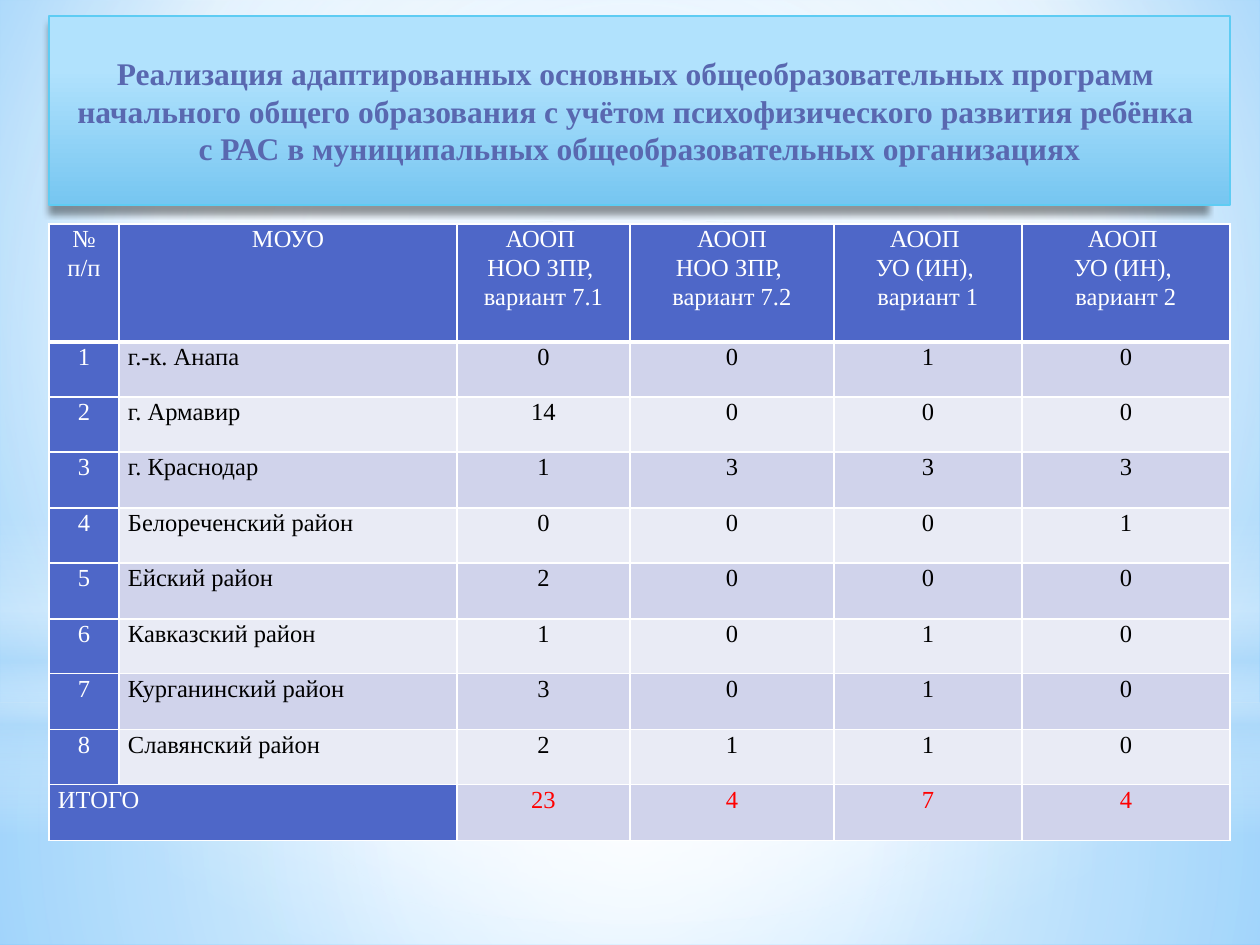
from lxml.etree import SubElement
from pptx import Presentation
from pptx.dml.color import RGBColor
from pptx.enum.shapes import MSO_SHAPE
from pptx.enum.text import MSO_ANCHOR, PP_ALIGN
from pptx.oxml.ns import qn
from pptx.util import Pt

EMU_PER_PX = 914400 / 126
FONT = "Times New Roman"

WHITE = RGBColor(0xFF, 0xFF, 0xFF)
BLACK = RGBColor(0x00, 0x00, 0x00)
RED = RGBColor(0xFF, 0x00, 0x00)
INDIGO = RGBColor(0x59, 0x68, 0xB0)
BLUE = RGBColor(0x4E, 0x67, 0xC8)
BAND_DARK = RGBColor(0xD0, 0xD3, 0xEB)
BAND_LIGHT = RGBColor(0xE9, 0xEB, 0xF5)
SKY = RGBColor(0xB4, 0xDC, 0xFA)
BACK_EDGE = RGBColor(0x5B, 0xB9, 0xFF)
BACK_CENTRE = RGBColor(0x9E, 0xD5, 0xFF)
TITLE_TOP = RGBColor(0xB1, 0xE2, 0xFD)
TITLE_BOTTOM = RGBColor(0x76, 0xC6, 0xF1)
TITLE_LINE = RGBColor(0x5E, 0xCC, 0xF3)

TITLE_LINES = [
    "Реализация адаптированных основных общеобразовательных программ ",
    "начального общего образования с учётом психофизического развития ребёнка ",
    "с РАС в муниципальных общеобразовательных организациях",
]
HEADERS = [
    ["№ п/п"],
    ["МОУО"],
    ["АООП ", "НОО ЗПР, ", "вариант 7.1"],
    ["АООП", "НОО ЗПР, ", "вариант 7.2"],
    ["АООП ", "УО (ИН), ", "вариант 1"],
    ["АООП ", "УО (ИН), ", "вариант 2"],
]
DISTRICTS = [
    ("г.-к. Анапа", 0, 0, 1, 0),
    ("г. Армавир", 14, 0, 0, 0),
    ("г. Краснодар", 1, 3, 3, 3),
    ("Белореченский район", 0, 0, 0, 1),
    ("Ейский район", 2, 0, 0, 0),
    ("Кавказский район", 1, 0, 1, 0),
    ("Курганинский район", 3, 0, 1, 0),
    ("Славянский район", 2, 1, 1, 0),
]
COLUMN_WIDTHS = [70, 338, 173, 204, 188, 208]
HEADER_HEIGHT = 118


def px(length):
    return round(length * EMU_PER_PX)


def add_color(parent, color, opacity=100):
    node = SubElement(parent, qn("a:srgbClr"), val=str(color))
    if opacity < 100:
        SubElement(node, qn("a:alpha"), val=str(opacity * 1000))


def set_gradient(owner, fill, stops, centre=None):
    fill.gradient()
    gradient = owner.element.find(".//" + qn("a:gradFill"))
    for child in list(gradient):
        gradient.remove(child)
    stop_list = SubElement(gradient, qn("a:gsLst"))
    for position, *color in stops:
        stop = SubElement(stop_list, qn("a:gs"), pos=str(position * 1000))
        add_color(stop, *color)
    if centre is None:
        SubElement(gradient, qn("a:lin"), ang="5400000", scaled="0")
    else:
        circle = SubElement(gradient, qn("a:path"), path="circle")
        sides = {side: str(share * 1000) for side, share in zip("ltrb", centre)}
        SubElement(circle, qn("a:fillToRect"), **sides)


def write_text(frame, lines, size=14, color=BLACK, bold=False,
               align=PP_ALIGN.CENTER, spacing=None, soft_breaks=False):
    para = frame.paragraphs[0]
    for index, line in enumerate(lines):
        if index and soft_breaks:
            para.add_line_break()
        elif index:
            para = frame.add_paragraph()
        para.alignment = align
        if spacing:
            para.line_spacing = spacing
        span = para.add_run()
        span.text = line
        span.font.name = FONT
        span.font.size = Pt(size)
        span.font.bold = bold
        span.font.color.rgb = color


def add_panel(page, kind, box, stops, centre=None):
    panel = page.shapes.add_shape(kind, *map(px, box))
    panel.shadow.inherit = False
    panel.line.fill.background()
    set_gradient(panel, panel.fill, stops, centre)
    return panel


def draw_backdrop(page, box):
    left, top, width, height = box
    middle = (50, 50, 50, 50)
    set_gradient(page, page.background.fill,
                 [(0, BACK_CENTRE), (60, WHITE), (100, BACK_EDGE)], (20, 10, 20, 60))
    horizon = 703
    add_panel(page, MSO_SHAPE.RECTANGLE, (left, top + horizon, width, height - horizon),
              [(0, WHITE, 91), (37, WHITE, 76), (100, SKY, 79)], middle)
    add_panel(page, MSO_SHAPE.RECTANGLE, (left, top, width, horizon),
              [(0, WHITE, 89), (48, WHITE, 62), (100, SKY, 79)], middle)
    add_panel(page, MSO_SHAPE.RECTANGLE, (left, top + 519, width, 315),
              [(0, WHITE, 0), (29, WHITE, 30), (45, SKY, 40),
               (55, WHITE, 26), (65, SKY, 60), (100, WHITE, 0)])
    add_panel(page, MSO_SHAPE.OVAL, (left, top + 220, width, horizon),
              [(0, WHITE), (56, WHITE, 0)], middle)


def draw_title(page, box):
    banner = add_panel(page, MSO_SHAPE.RECTANGLE, box,
                       [(28, TITLE_TOP), (100, TITLE_BOTTOM)])
    banner.line.color.rgb = TITLE_LINE
    banner.line.width = Pt(0.75)
    effects = banner.element.find(".//" + qn("a:effectLst"))
    shadow = SubElement(effects, qn("a:outerShdw"), blurRad="50800", dist="50800",
                        dir="5400000", sx="98000", algn="tl", rotWithShape="0")
    add_color(shadow, BLACK, 40)
    frame = banner.text_frame
    frame.word_wrap = True
    frame.vertical_anchor = MSO_ANCHOR.MIDDLE
    write_text(frame, TITLE_LINES, size=18, color=INDIGO, bold=True, soft_breaks=True)


def set_borders(cell, **widths):
    properties = cell._tc.get_or_add_tcPr()
    for side in "LRTB":
        line = SubElement(properties, qn("a:ln" + side), w=str(Pt(widths.get(side, 1))))
        add_color(SubElement(line, qn("a:solidFill")), WHITE)


def fill_cell(cell, lines, fill, color, align, **borders):
    set_borders(cell, **borders)
    cell.fill.solid()
    cell.fill.fore_color.rgb = fill
    cell.margin_left = cell.margin_right = px(9)
    cell.margin_top = cell.margin_bottom = 0
    write_text(cell.text_frame, lines, color=color, align=align, spacing=1.07)


def draw_table(page, box):
    totals = [sum(values) for values in list(zip(*DISTRICTS))[1:]]
    body = [(number, *district) for number, district in enumerate(DISTRICTS, 1)]
    body.append(("ИТОГО", "", *totals))
    last = len(body)
    table = page.shapes.add_table(last + 1, len(HEADERS), *map(px, box)).table
    table.first_row = table.horz_banding = False
    for column, width in zip(table.columns, COLUMN_WIDTHS):
        column.width = px(width)
    body_height = box[3] - HEADER_HEIGHT
    table.rows[0].height = px(HEADER_HEIGHT)
    for index in range(last):
        edges = [body_height * step // last for step in (index, index + 1)]
        table.rows[index + 1].height = px(edges[1] - edges[0])

    for column, lines in enumerate(HEADERS):
        fill_cell(table.cell(0, column), lines, BLUE, WHITE, PP_ALIGN.CENTER, B=3)
    for row, values in enumerate(body, 1):
        is_total = row == last
        band = BAND_DARK if row % 2 else BAND_LIGHT
        for column, value in enumerate(values):
            is_label = column == 0 or is_total and column == 1
            fill = BLUE if is_label else band
            color = WHITE if is_label else RED if is_total else BLACK
            is_left = column == 1 or is_total and is_label
            align = PP_ALIGN.LEFT if is_left else PP_ALIGN.CENTER
            lines = [str(value)] if value != "" else []
            fill_cell(table.cell(row, column), lines, fill, color, align,
                      T=3 if row == 1 else 1)
    table.cell(last, 0).merge(table.cell(last, 1))


def main():
    deck = Presentation()
    deck.slide_width, deck.slide_height = px(1260), px(945)
    page = deck.slides.add_slide(deck.slide_layouts[6])
    draw_backdrop(page, (0, 0, 1260, 945))
    draw_title(page, (49, 16, 1181, 189))
    draw_table(page, (49, 224, 1181, 617))
    deck.save("out.pptx")


if __name__ == "__main__":
    main()
